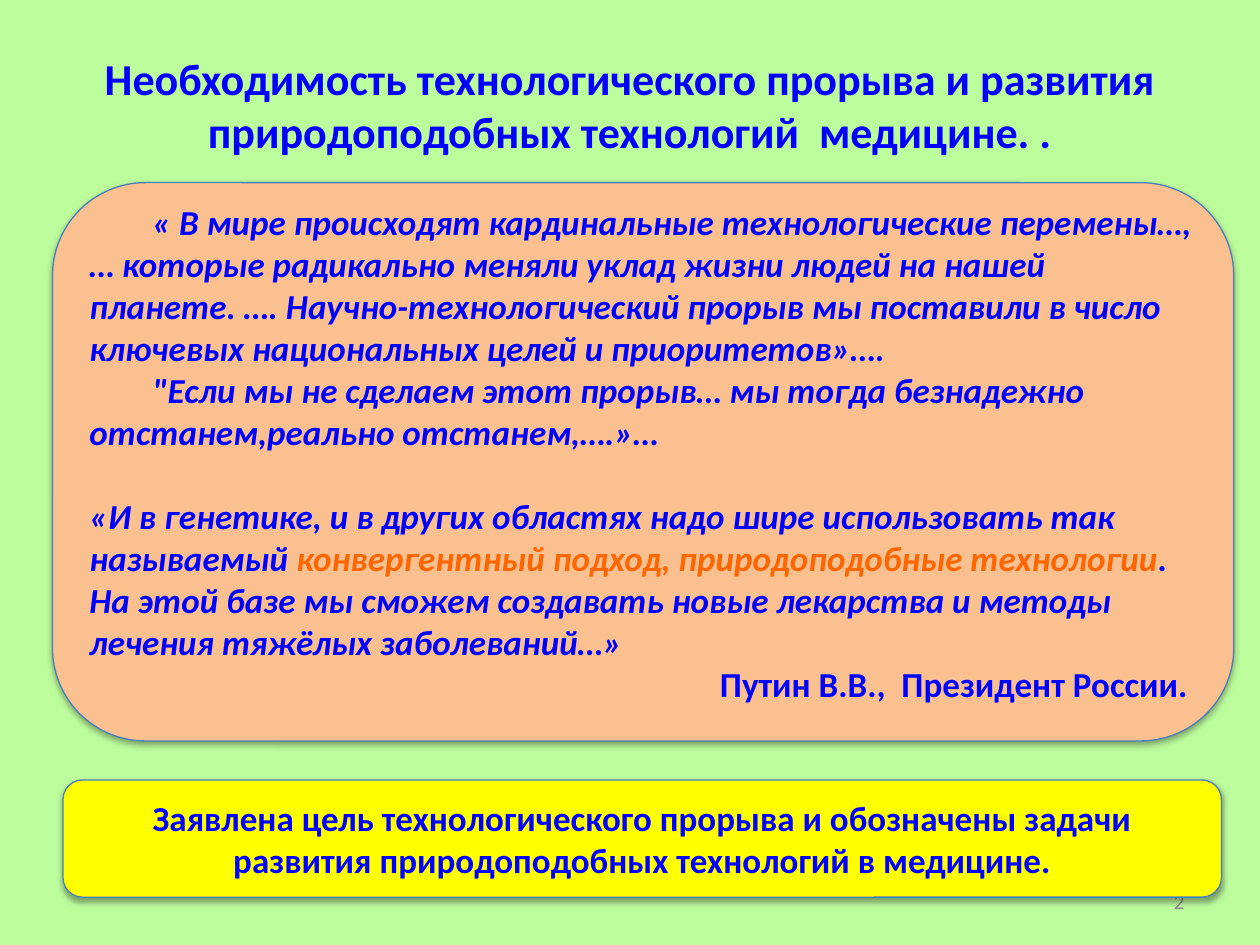
from pptx import Presentation
from pptx.dml.color import RGBColor
from pptx.enum.shapes import MSO_SHAPE as Shape
from pptx.enum.text import MSO_ANCHOR as Anchor, MSO_AUTO_SIZE as AutoSize, PP_ALIGN as Align
from pptx.util import Pt

BACKGROUND = RGBColor(0xBD, 0xFC, 0x9D)
PEACH = RGBColor(0xFA, 0xC0, 0x90)
YELLOW = RGBColor(0xFF, 0xFF, 0x00)
OUTLINE = RGBColor(0x4B, 0x7E, 0xBC)
BLUE = RGBColor(0x00, 0x00, 0xFF)
ORANGE = RGBColor(0xFF, 0x66, 0x00)
GREY = RGBColor(0x8C, 0x8C, 0x8C)

TITLE = "Необходимость технологического прорыва и развития природоподобных технологий  медицине. ."
QUOTE_CHANGES = (
    "« В мире происходят кардинальные технологические перемены…, … которые радикально "
    "меняли уклад жизни людей на нашей планете. …. Научно-технологический прорыв мы "
    "поставили в число ключевых национальных целей и приоритетов»…."
)
QUOTE_LAG = (
    "\"Если мы не сделаем этот прорыв… мы тогда безнадежно отстанем,реально отстанем,….»…"
)
QUOTE_GENETICS = [
    ("«И в генетике, и в других областях надо шире использовать так называемый ", BLUE),
    ("конвергентный подход, природоподобные технологии", ORANGE),
    (". На этой базе мы сможем создавать новые лекарства и методы лечения тяжёлых "
     "заболеваний…»", BLUE),
]
SIGNATURE = "Путин В.В.,  Президент России."
CONCLUSION = (
    "Заявлена цель технологического прорыва и обозначены задачи развития "
    "природоподобных технологий в медицине."
)


def write(paragraph, content, size=20, color=BLUE, bold=True, italic=False,
          align=Align.LEFT, before=0, indent=0, right=0):
    """Fill a paragraph with a string or with (text, colour) pairs."""
    paragraph.alignment = align
    paragraph.space_before = Pt(before)
    properties = paragraph._p.get_or_add_pPr()
    properties.set("marR", str(Pt(right)))
    properties.set("indent", str(Pt(indent)))
    pairs = [(content, color)] if isinstance(content, str) else content
    for text, run_color in pairs:
        run = paragraph.add_run()
        run.text = text
        font = run.font
        font.name, font.size = "Calibri", Pt(size)
        font.bold, font.italic = bold, italic
        font.color.rgb = run_color


def place(shape, left, top, width, height):
    """Move and size a shape in points."""
    shape.left, shape.top = Pt(left), Pt(top)
    shape.width, shape.height = Pt(width), Pt(height)


def prepare_frame(shape, anchor=Anchor.MIDDLE):
    """Return the wrapped text frame of a shape."""
    frame = shape.text_frame
    frame.word_wrap = True
    frame.auto_size = AutoSize.NONE
    frame.vertical_anchor = anchor
    return frame


def add_text_box(slide, left, top, width, height, anchor=Anchor.MIDDLE):
    """Add a text box and return its text frame."""
    box = slide.shapes.add_textbox(Pt(left), Pt(top), Pt(width), Pt(height))
    return prepare_frame(box, anchor)


def add_panel(slide, left, top, width, height, fill):
    """Add a rounded panel that keeps the soft shadow of the theme."""
    panel = slide.shapes.add_shape(
        Shape.ROUNDED_RECTANGLE, Pt(left), Pt(top), Pt(width), Pt(height))
    panel.fill.solid()
    panel.fill.fore_color.rgb = fill
    panel.line.color.rgb = OUTLINE
    panel.line.width = Pt(0.75)
    return panel


def add_quotes(slide):
    """Add the quotations and their signature."""
    frame = add_text_box(slide, 44, 111, 646, 322, Anchor.TOP)
    write(frame.paragraphs[0], QUOTE_CHANGES, italic=True, indent=36)
    write(frame.add_paragraph(), QUOTE_LAG, italic=True, indent=36)
    write(frame.add_paragraph(), QUOTE_GENETICS, italic=True, before=24)
    write(frame.add_paragraph(), SIGNATURE, align=Align.RIGHT, right=4)


def main():
    """Build the slide and save it."""
    presentation = Presentation()
    presentation.slide_width, presentation.slide_height = Pt(720), Pt(540)
    slide = presentation.slides.add_slide(presentation.slide_layouts[5])
    slide.background.fill.solid()
    slide.background.fill.fore_color.rgb = BACKGROUND

    title = slide.shapes.title
    place(title, 36, 14.4, 648, 90)
    write(prepare_frame(title).paragraphs[0], TITLE, size=25.2, align=Align.CENTER)

    add_panel(slide, 30, 104.4, 675, 319, PEACH)
    number = add_text_box(slide, 516, 500.5, 168, 28.75)
    write(number.paragraphs[0], "2", size=12, color=GREY, bold=False, align=Align.RIGHT)
    add_quotes(slide)
    conclusion = add_panel(slide, 36, 445.7, 662, 67, YELLOW)
    write(prepare_frame(conclusion).paragraphs[0], CONCLUSION, align=Align.CENTER)

    presentation.save("out.pptx")


if __name__ == "__main__":
    main()
